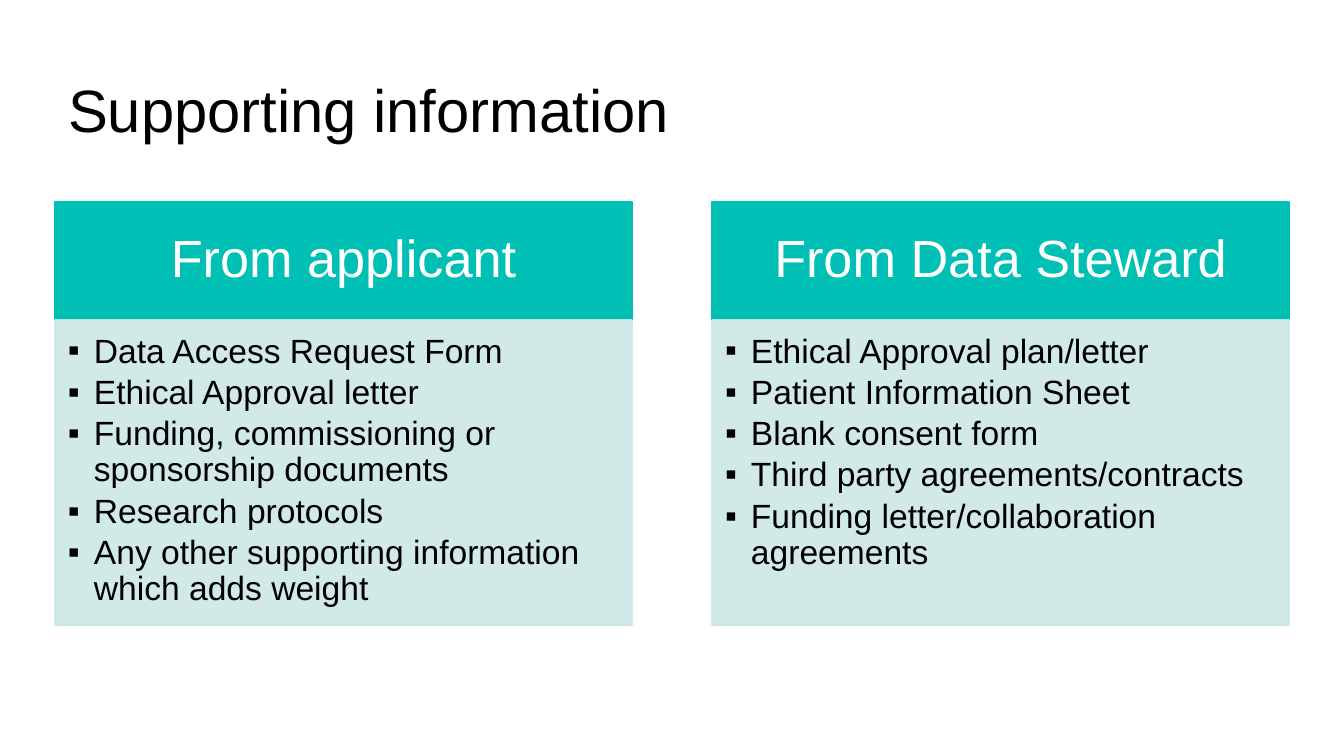
from dataclasses import dataclass

from lxml.etree import SubElement
from pptx import Presentation
from pptx.dml.color import RGBColor
from pptx.enum.shapes import MSO_SHAPE
from pptx.enum.text import MSO_ANCHOR, PP_ALIGN
from pptx.oxml.ns import qn
from pptx.util import Pt


@dataclass(frozen=True)
class Theme:
    font: str = "Arial"
    ink: str = "000000"
    white: str = "FFFFFF"
    teal: str = "00C0B5"
    pale: str = "CCE8E5"
    title: int = 32
    head: int = 28
    body: int = 18


theme = Theme()
PX = 914400 / 134.4


def px(n):
    """Turn pixels into EMU."""
    return round(n * PX)


def write(par, text, size, color):
    """Add one run and set the paragraph's line spacing."""
    par.line_spacing = 0.9
    run = par.add_run()
    run.text = text
    run.font.name = theme.font
    run.font.size = Pt(size)
    run.font.color.rgb = RGBColor.from_string(color)


deck = Presentation()
deck.slide_width, deck.slide_height = px(1344), px(756)
slide = deck.slides.add_slide(deck.slide_layouts[6])

title = slide.shapes.add_textbox(px(55), px(40), px(1235), px(146)).text_frame
title.word_wrap = True
title.vertical_anchor = MSO_ANCHOR.MIDDLE
write(title.paragraphs[0], "Supporting information", theme.title, theme.ink)

columns = [
    ("From applicant", [
        "Data Access Request Form",
        "Ethical Approval letter",
        "Funding, commissioning or sponsorship documents",
        "Research protocols",
        "Any other supporting information which adds weight",
    ]),
    ("From Data Steward", [
        "Ethical Approval plan/letter",
        "Patient Information Sheet",
        "Blank consent form",
        "Third party agreements/contracts",
        "Funding letter/collaboration agreements",
    ]),
]
left, top, wide, gap = 55, 202, 577, 80
head_h, body_h = 118, 305

for col, (name, items) in enumerate(columns):
    x = left + col * (wide + gap)
    frames = []
    for y, high, color, alpha, pads in (
        (top, head_h, theme.teal, 100, (30, 16, 30, 16)),
        (top + head_h, body_h, theme.pale, 90, (13, 14, 19, 22)),
    ):
        box = slide.shapes.add_shape(MSO_SHAPE.RECTANGLE, px(x), px(y), px(wide), px(high))
        box.shadow.inherit = False
        box.fill.solid()
        box.line.width = Pt(1)
        for paint in (box.fill, box.line.fill):
            paint.solid()
            paint.fore_color.rgb = RGBColor.from_string(color)
        if alpha < 100:
            for tint in box._element.spPr.iter(qn("a:srgbClr")):
                SubElement(tint, qn("a:alpha"), val=str(alpha * 1000))
        frame = box.text_frame
        frame.word_wrap = True
        (frame.margin_left, frame.margin_top,
         frame.margin_right, frame.margin_bottom) = map(px, pads)
        frames.append(frame)

    head, body = frames
    head.vertical_anchor = MSO_ANCHOR.MIDDLE
    head.paragraphs[0].alignment = PP_ALIGN.CENTER
    write(head.paragraphs[0], name, theme.head, theme.white)

    body.vertical_anchor = MSO_ANCHOR.TOP
    for row, item in enumerate(items):
        par = body.add_paragraph() if row else body.paragraphs[0]
        par.level = 1
        par.alignment = PP_ALIGN.LEFT
        props = par._p.get_or_add_pPr()
        props.set("marL", str(px(26)))
        props.set("indent", str(-px(26)))
        SubElement(props, qn("a:buFont"), typeface=theme.font)
        SubElement(props, qn("a:buChar"), char="▪")
        par.space_after = Pt(2.7)
        write(par, item, theme.body, theme.ink)

deck.save("out.pptx")
